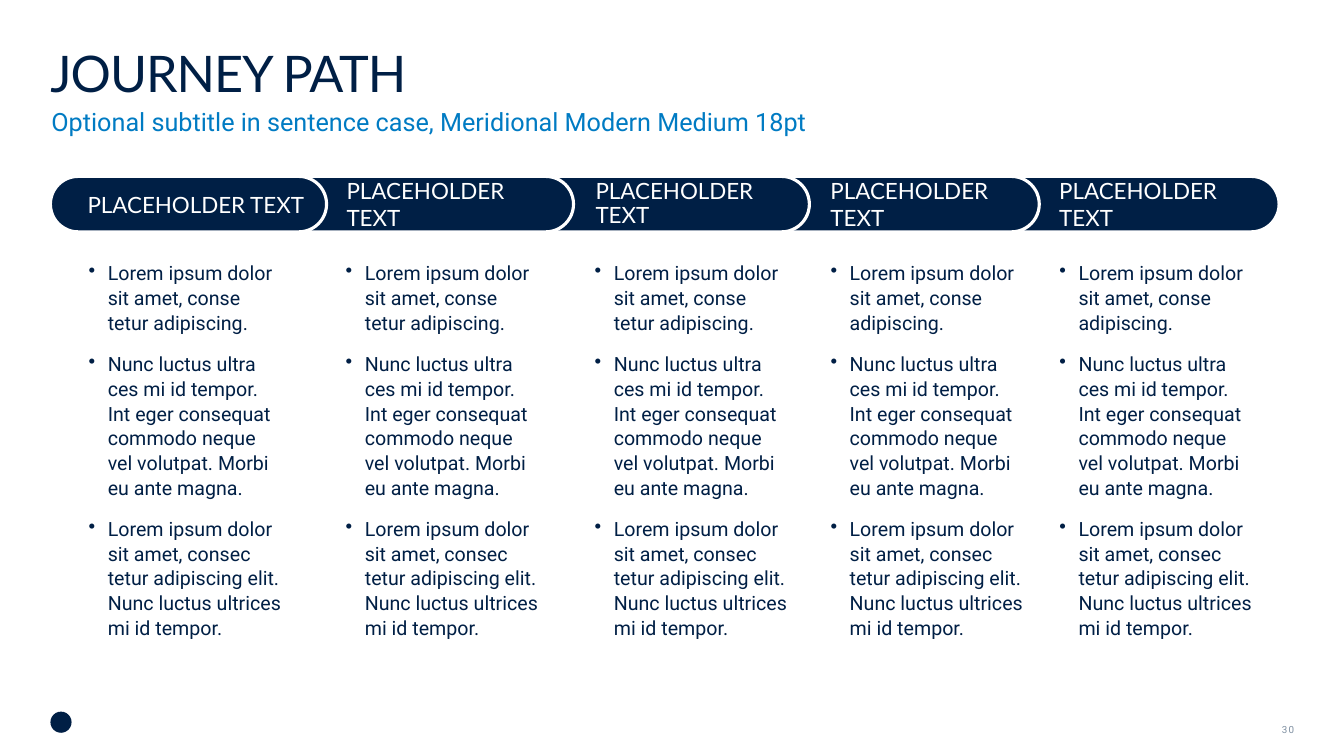
import pptx
import pptx.dml.color
import pptx.enum.shapes
import pptx.enum.text
import pptx.oxml.ns
import pptx.util
import lxml.etree

NAVY = pptx.dml.color.RGBColor(0x00, 0x1F, 0x45)
BLUE = pptx.dml.color.RGBColor(0x00, 0x7B, 0xC3)
GREY = pptx.dml.color.RGBColor(0x7E, 0x8F, 0xA1)
WHITE = pptx.dml.color.RGBColor(0xFF, 0xFF, 0xFF)

ALIGN = pptx.enum.text.PP_ALIGN
ANCHOR = pptx.enum.text.MSO_ANCHOR
SHAPE = pptx.enum.shapes.MSO_SHAPE

COLUMNS, ROWS = 160, 90
HEADING_FONT, BODY_FONT = "Lato", "Roboto"

HEADING = "PLACEHOLDER TEXT"
MIDDLE = ("Nunc luctus ultra\vces mi id tempor. Int eger consequat commodo "
          "neque vel volutpat. Morbi eu ante magna.")
CLOSING = ("Lorem ipsum dolor sit amet, consec tetur adipiscing elit. "
           "Nunc luctus ultrices mi id tempor.")
LONG_OPENING = "Lorem ipsum dolor\vsit amet, conse tetur adipiscing."
SHORT_OPENING = "Lorem ipsum dolor\vsit amet, conse adipiscing."

# pill left, pill width, heading indent, heading line spacing, list left, opening
STEPS = [
    (6, 32.88, 2.28, 1.0, 10.56, LONG_OPENING),
    (33.84, 34.44, 5.28, 1.0, 41.16, LONG_OPENING),
    (61.92, 34.44, 6.84, 0.9, 70.8, LONG_OPENING),
    (89.88, 33.84, 6.84, 1.0, 98.88, SHORT_OPENING),
    (118.68, 33.6, 5.28, 1.0, 126.12, SHORT_OPENING),
]


def assign(target, values):
    """Set each named attribute of the target."""
    for name, value in values.items():
        setattr(target, name, value)


class JourneyPage:
    """Hold the slide, its grid and its text style."""

    def __init__(self, deck):
        """Add a title-only slide to the deck."""
        self.column = deck.slide_width / COLUMNS
        self.row = deck.slide_height / ROWS
        self.page = deck.slides.add_slide(deck.slide_layouts[5])

    def across(self, columns):
        """Turn columns into a length."""
        return pptx.util.Emu(round(columns * self.column))

    def place(self, left, top, width, height):
        """Turn a grid area into four lengths."""
        return (self.across(left), pptx.util.Emu(round(top * self.row)),
                self.across(width), pptx.util.Emu(round(height * self.row)))

    def fill_text(self, frame, texts, font, size, color, spacing=0,
                  bullet=False, **para_format):
        """Fill a text frame with styled paragraphs."""
        assign(frame, {"word_wrap": True,
                       "auto_size": pptx.enum.text.MSO_AUTO_SIZE.NONE})
        for index, text in enumerate(texts):
            para = frame.add_paragraph() if index else frame.paragraphs[0]
            para.text = text
            assign(para, {"alignment": ALIGN.LEFT, **para_format})
            para.space_before = pptx.util.Pt(12 if index else 0)
            if bullet:
                self.add_bullet(para)
            for span in para.runs:
                assign(span.font, {"name": font, "size": pptx.util.Pt(size)})
                span.font.color.rgb = color
                if spacing:
                    span.font._element.set("spc", str(spacing))

    def add_bullet(self, para):
        """Give a paragraph a hanging bullet."""
        properties = para._p.get_or_add_pPr()
        indent = self.across(2.28)
        properties.set("marL", str(indent))
        properties.set("indent", str(-indent))
        mark = lxml.etree.SubElement(properties, pptx.oxml.ns.qn("a:buChar"))
        mark.set("char", "•")

    def flush(self, frame, anchor):
        """Remove the margins of a frame and anchor its text."""
        assign(frame, {"margin_left": 0, "margin_top": 0, "margin_right": 0,
                       "margin_bottom": 0, "vertical_anchor": anchor})

    def title(self, area, text):
        """Place and fill the title placeholder."""
        box = self.page.shapes.title
        assign(box, dict(zip(("left", "top", "width", "height"), self.place(*area))))
        self.flush(box.text_frame, ANCHOR.BOTTOM)
        self.fill_text(box.text_frame, [text], HEADING_FONT, 36, NAVY, spacing=-70)

    def text(self, area, texts, size, color, anchor=ANCHOR.TOP, **text_format):
        """Add a text box without margins."""
        box = self.page.shapes.add_textbox(*self.place(*area))
        self.flush(box.text_frame, anchor)
        self.fill_text(box.text_frame, texts, BODY_FONT, size, color, **text_format)

    def shape(self, kind, area, line=None):
        """Add a navy shape, outlined when a line colour is given."""
        box = self.page.shapes.add_shape(kind, *self.place(*area))
        box.shadow.inherit = False
        box.fill.solid()
        box.fill.fore_color.rgb = NAVY
        if line is None:
            box.line.fill.background()
        else:
            box.line.color.rgb = line
            box.line.width = pptx.util.Pt(2.25)
        return box

    def pill(self, area, text, indent, line_spacing):
        """Add a rounded step heading."""
        box = self.shape(SHAPE.ROUNDED_RECTANGLE, area, WHITE)
        box.adjustments[0] = 0.5
        box.text_frame.vertical_anchor = ANCHOR.MIDDLE
        self.fill_text(box.text_frame, [text], HEADING_FONT, 16, WHITE,
                       line_spacing=line_spacing)
        properties = box.text_frame.paragraphs[0]._p.get_or_add_pPr()
        properties.set("marL", str(self.across(indent)))
        properties.set("indent", "0")


def main():
    """Build and save the journey path slide."""
    deck = pptx.Presentation()
    assign(deck, {"slide_width": pptx.util.Inches(13.33),
                  "slide_height": pptx.util.Inches(7.5)})
    journey = JourneyPage(deck)
    journey.shape(SHAPE.OVAL, (6, 84.72, 2.52, 2.52))
    journey.text((149.16, 86.16, 4.92, 1.32), ["30"], 7, GREY, ANCHOR.MIDDLE,
                 spacing=100, alignment=ALIGN.RIGHT)
    journey.title((6, 4.92, 148, 7.32), "JOURNEY PATH")
    for left, width, indent, line_spacing, _, _ in reversed(STEPS):
        journey.pill((left, 21, width, 6.6), HEADING, indent, line_spacing)
    for _, _, _, _, left, opening in STEPS:
        journey.text((left, 30.96, 23.4, 45.36), [opening, MIDDLE, CLOSING],
                     14, NAVY, bullet=True, line_spacing=1.05)
    journey.text((6.12, 12.6, 148, 3.84),
                 ["Optional subtitle in sentence case, Meridional Modern Medium 18pt"],
                 18, BLUE, line_spacing=1.03)
    deck.save("out.pptx")


if __name__ == "__main__":
    main()
